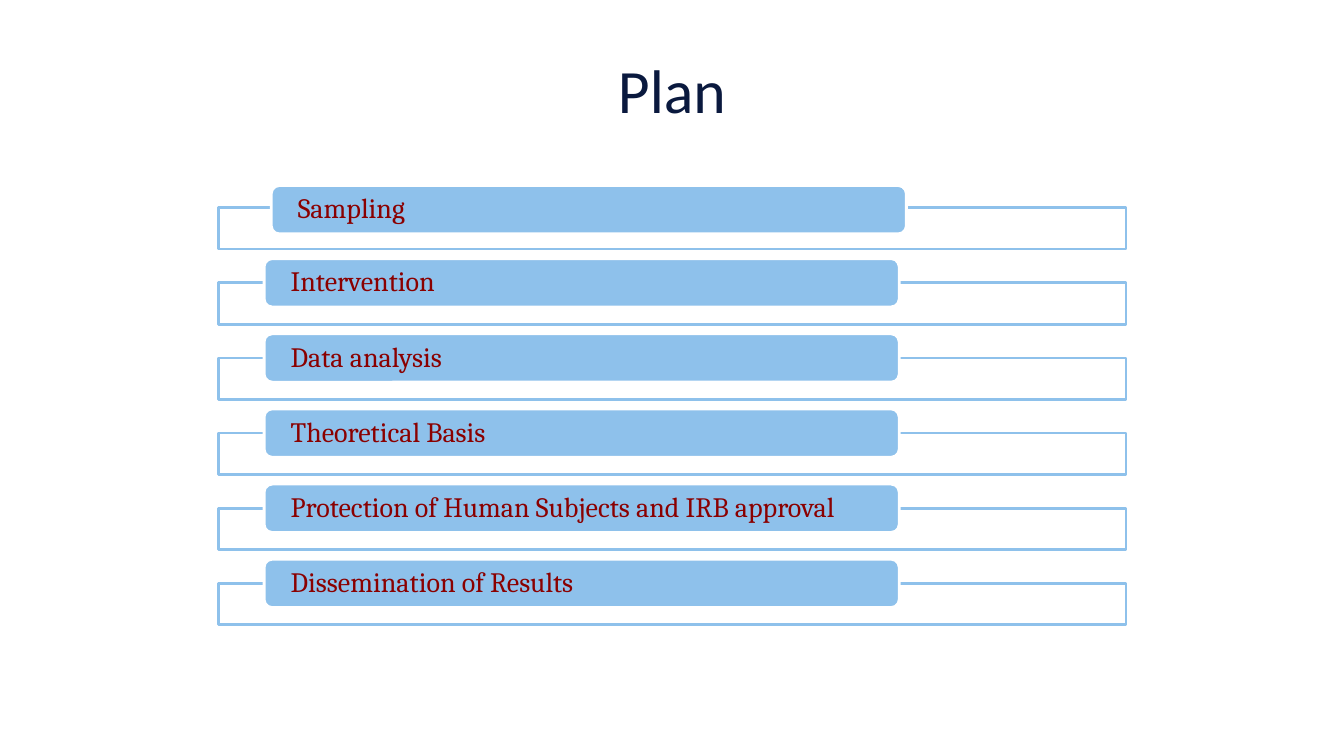
from lxml import etree
from pptx import Presentation, util as u
from pptx.dml.color import RGBColor
from pptx.enum import shapes, text
from pptx.oxml import ns

NAVY = RGBColor(0x0A, 0x19, 0x3E)
SKY = RGBColor(0x8E, 0xC1, 0xEB)
WHITE = RGBColor(0xFF, 0xFF, 0xFF)
WINE = RGBColor(0x8A, 0x00, 0x00)

WIDE, HIGH = u.Inches(13.33), u.Inches(7.5)
TOP, PITCH = 27.47, 9.94
STEPS = [
    "Sampling",
    "Intervention",
    "Data analysis",
    "Theoretical Basis",
    "Protection of Human Subjects and IRB approval",
    "Dissemination of Results",
]
HEAD = {"name": "Calibri", "size": u.Pt(44)}
ITEM = {"name": "Cambria", "size": u.Pt(20)}


def place(left, top, width, height):
    return [round(part * side / 100) for part, side in
            zip((left, top, width, height), (WIDE, HIGH, WIDE, HIGH))]


def apply(item, values):
    for name, value in values.items():
        setattr(item, name, value)


def write(shape, words, font, color, align, inset):
    frame = shape.text_frame
    apply(frame, {
        "word_wrap": True, "vertical_anchor": text.MSO_ANCHOR.MIDDLE,
        "margin_left": inset, "margin_right": inset,
        "margin_top": 0, "margin_bottom": 0,
    })
    para = frame.paragraphs[0]
    apply(para, {"text": words, "alignment": align, "line_spacing": 0.9})
    apply(para.font, font)
    para.font.color.rgb = color


def block(slide, kind, area, fill, line):
    shape = slide.shapes.add_shape(kind, *place(*area))
    shape.shadow.inherit = False
    shape.fill.solid()
    shape.fill.fore_color.rgb = fill
    shape.line.color.rgb = line
    shape.line.width = u.Pt(2)
    return shape


def fade(shape, share):
    tint = shape.fill._xPr.find(ns.qn("a:solidFill"))[0]
    etree.SubElement(tint, ns.qn("a:alpha"), val=str(share * 1000))


def title(slide, words):
    box = slide.shapes.add_textbox(*place(5, 4, 90, 16.67))
    write(box, words, HEAD, NAVY, text.PP_ALIGN.CENTER, u.Inches(0.1))


def step(slide, row, words):
    kinds = shapes.MSO_SHAPE
    top = TOP + row * PITCH
    bar = block(slide, kinds.RECTANGLE, (16.28, top, 67.5, 5.47), WHITE, SKY)
    fade(bar, 90)
    right, down = (0.53, 0.27) if row == 0 else (0, 0)
    area = (19.65 + right, top - 3.2 + down, 47.26, 6.4)
    pill = block(slide, kinds.ROUNDED_RECTANGLE, area, SKY, WHITE)
    write(pill, words, ITEM, WINE, text.PP_ALIGN.LEFT, u.Inches(0.24))


def main():
    deck = Presentation()
    apply(deck, {"slide_width": WIDE, "slide_height": HIGH})
    slide = deck.slides.add_slide(deck.slide_layouts[6])
    title(slide, "Plan")
    for row, words in enumerate(STEPS):
        step(slide, row, words)
    deck.save("out.pptx")


if __name__ == "__main__":
    main()
